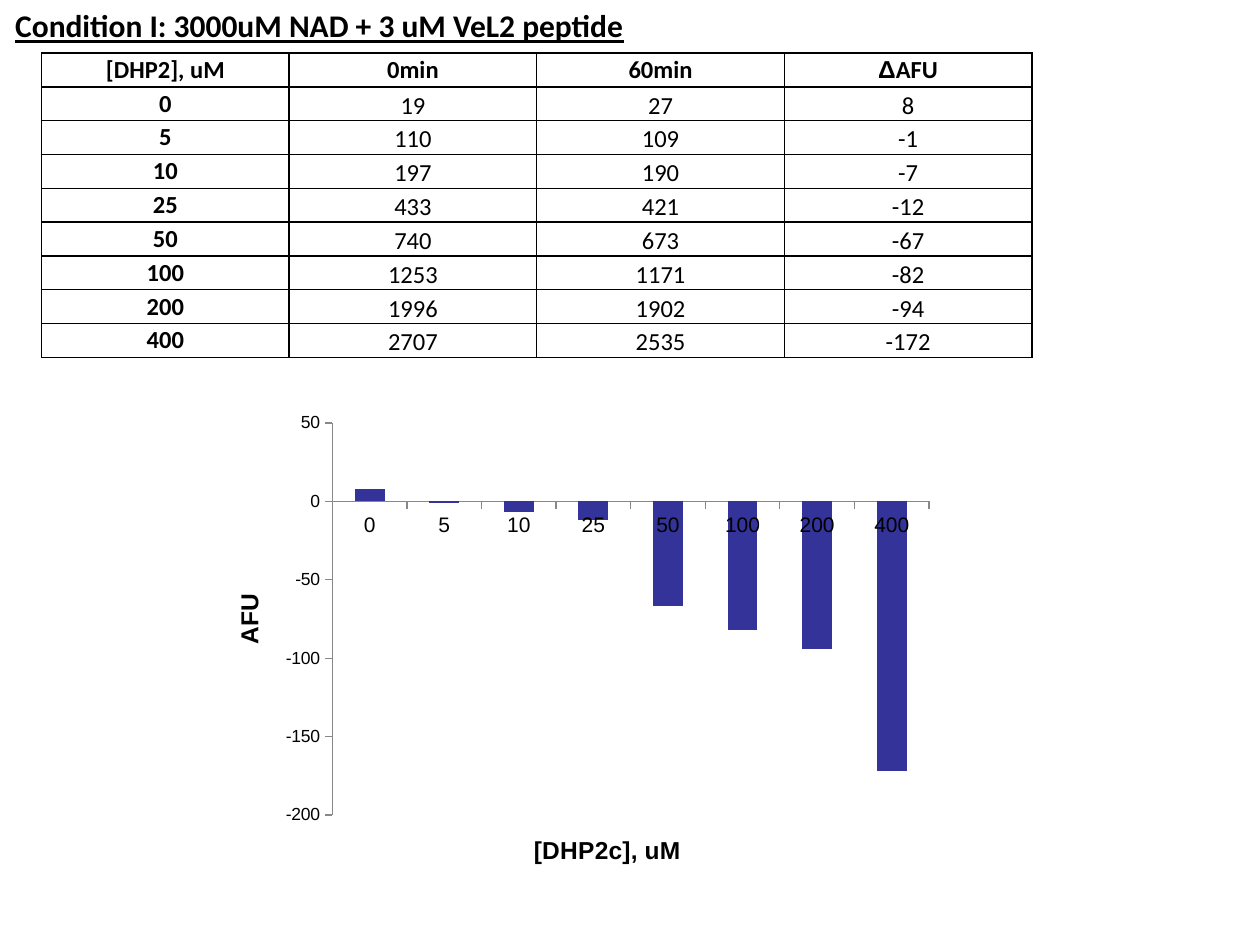
import dataclasses

import lxml.etree
import pptx
import pptx.chart.data
import pptx.dml.color
import pptx.enum.chart
import pptx.enum.text
import pptx.oxml
import pptx.oxml.ns
import pptx.util


@dataclasses.dataclass
class Theme:
    ink = pptx.dml.color.RGBColor(0, 0, 0)
    paper = pptx.dml.color.RGBColor(255, 255, 255)
    bar = pptx.dml.color.RGBColor(0x33, 0x33, 0x99)
    axis = pptx.dml.color.RGBColor(0x88, 0x88, 0x88)
    body = "Calibri"
    plain = "Arial"
    head = pptx.util.Pt(18)
    cell = pptx.util.Pt(14)
    label = pptx.util.Pt(12)
    tick = pptx.util.Pt(10)
    rule = pptx.util.Pt(1)


theme = Theme()


def style(font, size, bold=False, name=theme.body):
    font.size, font.bold, font.name = size, bold, name
    font.color.rgb = theme.ink


def border(cell):
    props = cell._tc.get_or_add_tcPr()
    for spot, side in enumerate(("lnL", "lnR", "lnT", "lnB")):
        line = pptx.oxml.parse_xml(
            f'<a:{side} {pptx.oxml.ns.nsdecls("a")} w="{theme.rule}"><a:solidFill>'
            f'<a:srgbClr val="{theme.ink}"/></a:solidFill></a:{side}>')
        props.insert(spot, line)


doc = pptx.Presentation()
doc.slide_width, doc.slide_height = pptx.util.Inches(10), pptx.util.Inches(7.5)
wide, high = doc.slide_width, doc.slide_height
slide = doc.slides.add_slide(doc.slide_layouts[5])

# Title
title = slide.shapes.title
title.left, title.top = 0, 0
title.width, title.height = int(wide * 0.507), pptx.util.Inches(0.4)
frame = title.text_frame
frame.word_wrap = False
frame.auto_size = pptx.enum.text.MSO_AUTO_SIZE.SHAPE_TO_FIT_TEXT
frame.vertical_anchor = pptx.enum.text.MSO_ANCHOR.TOP
frame.paragraphs[0].alignment = pptx.enum.text.PP_ALIGN.CENTER
run = frame.paragraphs[0].add_run()
run.text = "Condition I: 3000uM NAD + 3 uM VeL2 peptide"
style(run.font, theme.head, True)
run.font.underline = True

# Readings: dose, start, end; the change is worked out
heads = ["[DHP2], uM", "0min", "60min", "ΔAFU"]
reads = [(0, 19, 27), (5, 110, 109), (10, 197, 190), (25, 433, 421),
         (50, 740, 673), (100, 1253, 1171), (200, 1996, 1902), (400, 2707, 2535)]
doses = [str(dose) for dose, start, end in reads]
drops = [end - start for dose, start, end in reads]
rows = [heads] + [[*read, drop] for read, drop in zip(reads, drops)]

# Table
grid = slide.shapes.add_table(
    len(rows), len(heads), pptx.util.Inches(0.33), pptx.util.Inches(0.42),
    int(wide * 0.786), pptx.util.Inches(2.42)).table
grid.first_row = grid.horz_banding = False
for r, row in enumerate(rows):
    for c, value in enumerate(row):
        cell = grid.cell(r, c)
        cell.fill.solid()
        cell.fill.fore_color.rgb = theme.paper
        cell.margin_left = cell.margin_right = cell.margin_top = cell.margin_bottom = 0
        bold = r == 0 or c == 0
        anchor = pptx.enum.text.MSO_ANCHOR
        cell.vertical_anchor = anchor.MIDDLE if bold else anchor.BOTTOM
        para = cell.text_frame.paragraphs[0]
        para.alignment = pptx.enum.text.PP_ALIGN.CENTER
        text = str(value)
        parts = [("Δ", theme.plain), (text[1:], theme.body)] if text[0] == "Δ" else [(text, theme.body)]
        for part, name in parts:
            run = para.add_run()
            run.text = part
            style(run.font, theme.cell, bold, name)
        border(cell)

# Chart
data = pptx.chart.data.CategoryChartData()
data.categories = doses
data.add_series("Series 1", drops)
chart = slide.shapes.add_chart(
    pptx.enum.chart.XL_CHART_TYPE.COLUMN_CLUSTERED, int(wide * 0.175),
    pptx.util.Inches(3.17), int(wide * 0.592), high // 2, data).chart
chart.has_legend = chart.has_title = False
style(chart.font, theme.tick, name=theme.plain)
plot = chart.plots[0]
plot.gap_width = 150
plot.vary_by_categories = False
bars = plot.series[0]
bars.invert_if_negative = False
bars.format.fill.solid()
bars.format.fill.fore_color.rgb = theme.bar

# Axes
for axis, name, size in ((chart.category_axis, "[DHP2c], uM", theme.label),
                         (chart.value_axis, "AFU", theme.tick)):
    axis.has_major_gridlines = False
    axis.major_tick_mark = pptx.enum.chart.XL_TICK_MARK.OUTSIDE
    axis.minor_tick_mark = pptx.enum.chart.XL_TICK_MARK.NONE
    axis.format.line.color.rgb = theme.axis
    style(axis.tick_labels.font, size, name=theme.plain)
    run = axis.axis_title.text_frame.paragraphs[0].add_run()
    run.text = name
    style(run.font, theme.cell, True, theme.plain)
chart.value_axis.minimum_scale, chart.value_axis.maximum_scale = -200, 50
chart.value_axis.major_unit = 50
chart.value_axis.axis_title.text_frame._txBody.bodyPr.set("rot", "-5400000")

# Plot area as shares of the chart
area = chart._chartSpace.chart.plotArea
for old in area.findall(pptx.oxml.ns.qn("c:layout")):
    area.remove(old)
layout = lxml.etree.Element(pptx.oxml.ns.qn("c:layout"))
manual = lxml.etree.SubElement(layout, pptx.oxml.ns.qn("c:manualLayout"))
for tag, value in (("layoutTarget", "inner"), ("xMode", "edge"), ("yMode", "edge"),
                   ("x", "0.15"), ("y", "0.05"), ("w", "0.8"), ("h", "0.83")):
    lxml.etree.SubElement(manual, pptx.oxml.ns.qn(f"c:{tag}")).set("val", value)
area.insert(0, layout)

doc.save("out.pptx")
